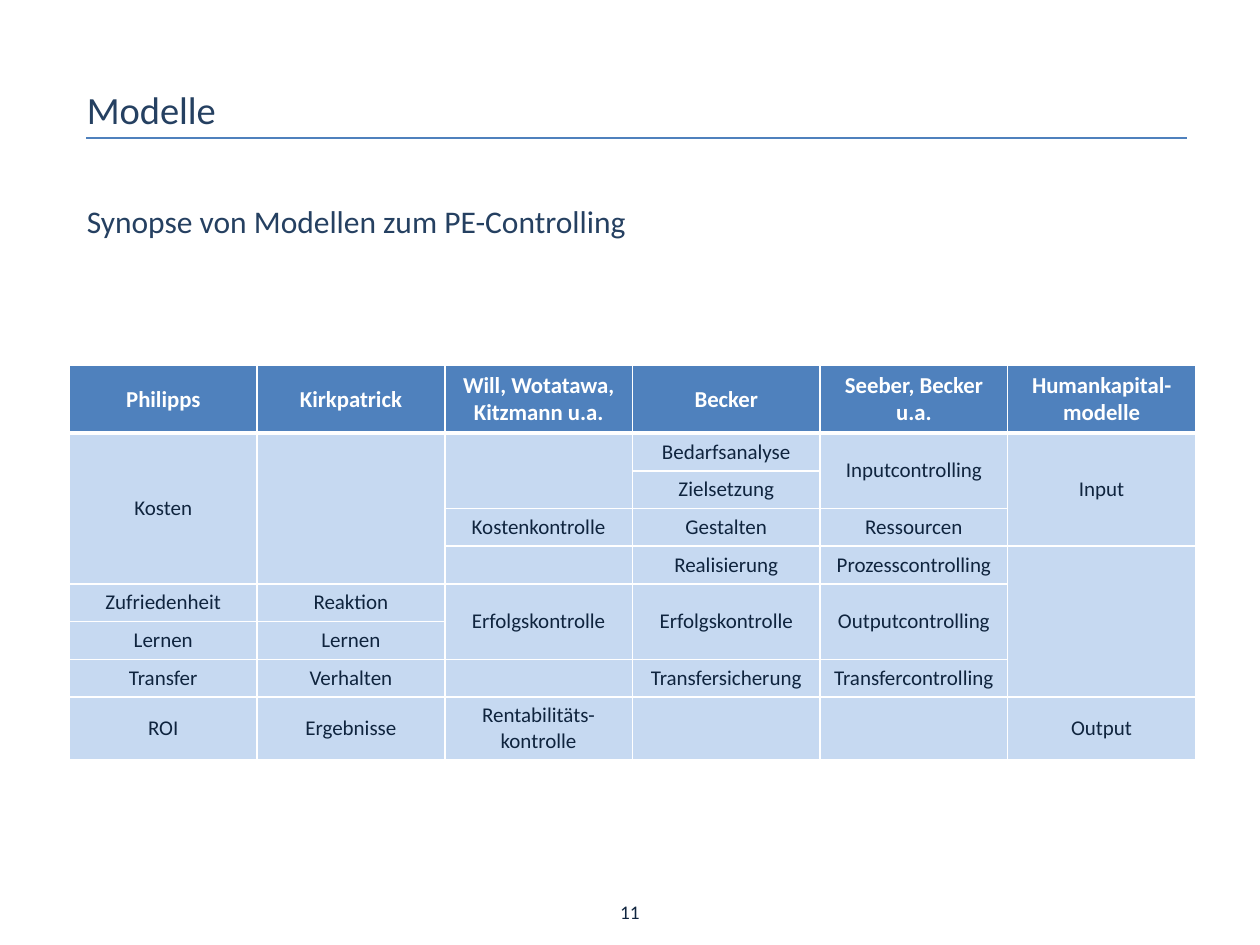
import pptx
import pptx.dml.color
import pptx.enum.shapes
import pptx.enum.text
import pptx.oxml
import pptx.oxml.ns
import pptx.util
from pptx.util import Cm

FONT = "Calibri"
NAVY, INK, BLUE, PALE, WHITE = "254061", "10253F", "4F81BD", "C6D9F1", "FFFFFF"
CELL_INK = "0F243E"
MIDDLE = pptx.enum.text.MSO_ANCHOR.MIDDLE
CENTER = pptx.enum.text.PP_ALIGN.CENTER
LEFT = pptx.enum.text.PP_ALIGN.LEFT

MODELS = ["Philipps", "Kirkpatrick", "Will, Wotatawa, Kitzmann u.a.", "Becker",
          "Seeber, Becker u.a.", "Humankapital-modelle"]
# None continues the cell above it
PHASES = [
    ["Kosten", "", "", "Bedarfsanalyse", "Inputcontrolling", "Input"],
    [None, None, None, "Zielsetzung", None, None],
    [None, None, "Kostenkontrolle", "Gestalten", "Ressourcen", None],
    [None, None, "", "Realisierung", "Prozesscontrolling", ""],
    ["Zufriedenheit", "Reaktion", "Erfolgskontrolle", "Erfolgskontrolle",
     "Outputcontrolling", None],
    ["Lernen", "Lernen", None, None, None, None],
    ["Transfer", "Verhalten", "", "Transfersicherung", "Transfercontrolling", None],
    ["ROI", "Ergebnisse", "Rentabilitäts-kontrolle", "", "", "Output"],
]


def color(hex_value):
    return pptx.dml.color.RGBColor.from_string(hex_value)


def style_paragraph(paragraph, size, ink, align=LEFT, bold=False):
    paragraph.alignment = align
    font = paragraph.font
    font.name, font.size, font.bold = FONT, pptx.util.Pt(size), bold
    font.color.rgb = color(ink)


def add_label(slide, box, text, size, ink, align=LEFT):
    label = slide.shapes.add_textbox(*box)
    label.text_frame.word_wrap = True
    label.text_frame.text = text
    style_paragraph(label.text_frame.paragraphs[0], size, ink, align)


def add_heading(slide, left, top, width):
    """Title with the rule below it."""
    add_label(slide, (left, top, Cm(19), Cm(1.2)), "Modelle", 22, NAVY)
    inset, rule_y = Cm(0.24), top + Cm(1.19)
    rule = slide.shapes.add_connector(
        pptx.enum.shapes.MSO_CONNECTOR.STRAIGHT,
        left + inset, rule_y, left + width, rule_y)
    rule.line.color.rgb = color(BLUE)
    rule.line.width = pptx.util.Pt(1.25)
    rule._element.spPr.append(pptx.oxml.parse_xml(
        f'<a:effectLst {pptx.oxml.ns.nsdecls("a")}/>'))


def set_borders(cell, top=1, bottom=1):
    widths = {"lnL": 1, "lnR": 1, "lnT": top, "lnB": bottom}
    for index, (side, width) in enumerate(widths.items()):
        cell._tc.get_or_add_tcPr().insert(index, pptx.oxml.parse_xml(
            f'<a:{side} {pptx.oxml.ns.nsdecls("a")} w="{pptx.util.Pt(width)}">'
            f'<a:solidFill><a:srgbClr val="{WHITE}"/></a:solidFill></a:{side}>'))


def fill_cell(cell, text, is_header):
    cell.text = text or ""
    cell.vertical_anchor = MIDDLE
    cell.margin_top = cell.margin_bottom = Cm(0.12)
    cell.fill.solid()
    cell.fill.fore_color.rgb = color(BLUE if is_header else PALE)
    size, ink = (13, WHITE) if is_header else (12, CELL_INK)
    style_paragraph(cell.text_frame.paragraphs[0], size, ink, CENTER, is_header)


def add_synopsis(slide, left, top, width):
    """Table comparing the models phase by phase."""
    content = [MODELS] + PHASES
    heights = [Cm(1.36)] + [Cm(0.76)] * 7 + [Cm(1.27)]
    table = slide.shapes.add_table(
        len(content), len(MODELS), left, top, width, sum(heights)).table
    table.horz_banding = False
    for column in table.columns:
        column.width = width // len(MODELS)
    for row, height in zip(table.rows, heights):
        row.height = height

    for r, texts in enumerate(content):
        for c, text in enumerate(texts):
            cell = table.cell(r, c)
            fill_cell(cell, text, r == 0)
            set_borders(cell, top=3 if r == 1 else 1, bottom=3 if r == 0 else 1)

    # Merge each cell with its continuations below
    for c in range(len(MODELS)):
        starts = [r for r, texts in enumerate(content) if texts[c] is not None]
        for start, following in zip(starts, starts[1:] + [len(content)]):
            if following - start > 1:
                table.cell(start, c).merge(table.cell(following - 1, c))


def main():
    deck = pptx.Presentation()
    deck.slide_width, deck.slide_height = Cm(25.4), Cm(19.05)
    slide = deck.slides.add_slide(deck.slide_layouts[6])
    add_heading(slide, Cm(1.5), Cm(1.6), Cm(22.43))
    add_label(slide, (Cm(1.5), Cm(3.94), Cm(23.4), Cm(2.56)),
              "Synopse von Modellen zum PE-Controlling", 18, NAVY)
    add_synopsis(slide, Cm(1.4), Cm(7.37), Cm(22.7))
    # Page number
    add_label(slide, (Cm(12), Cm(18.03), Cm(1.4), Cm(0.74)), "11", 11, INK, CENTER)
    deck.save("out.pptx")


if __name__ == "__main__":
    main()
